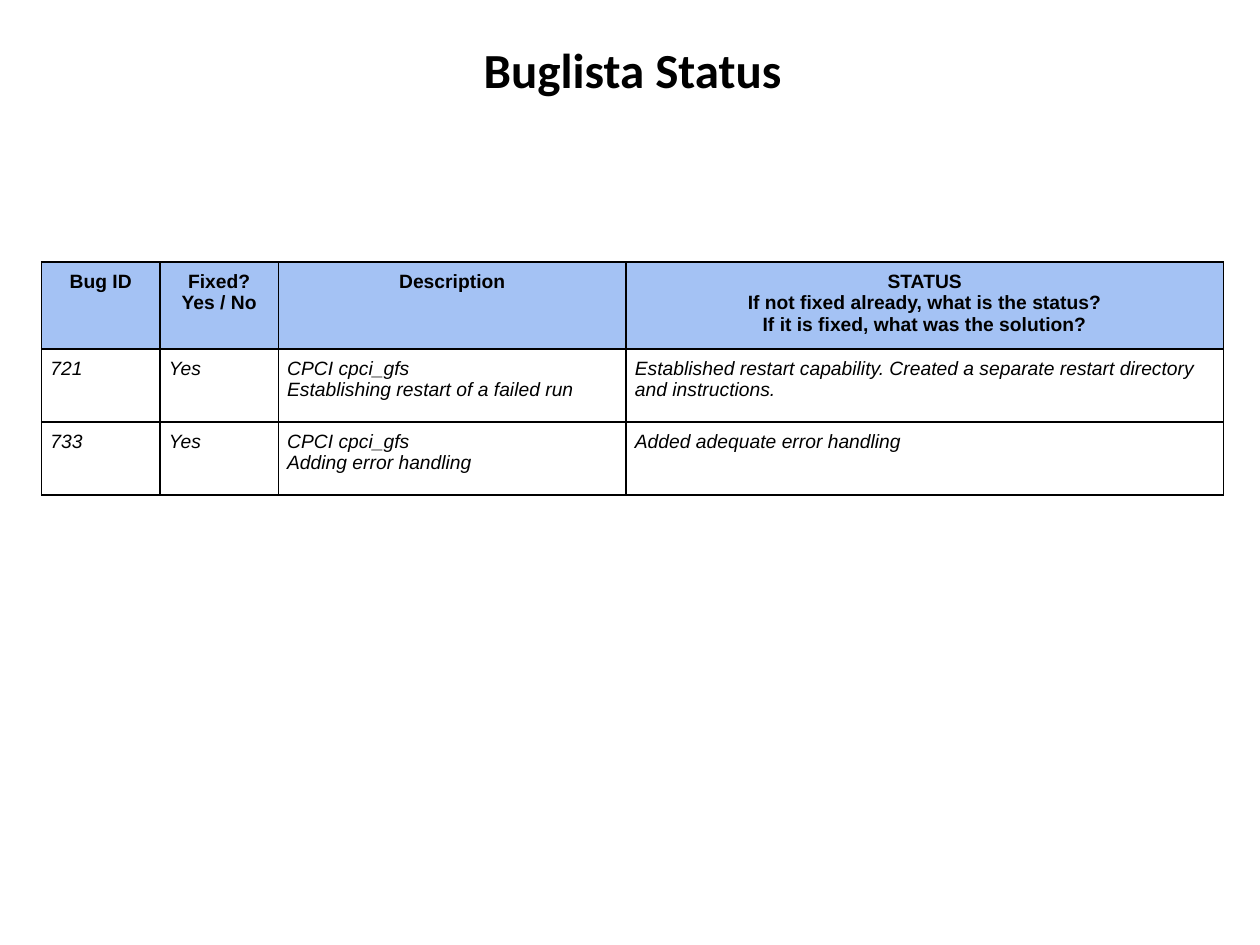
from lxml.etree import SubElement
from pptx import Presentation
from pptx.dml.color import RGBColor
from pptx.enum.text import MSO_ANCHOR, PP_ALIGN
from pptx.oxml.ns import qn
from pptx.util import Inches, Pt

BLACK = RGBColor(0x00, 0x00, 0x00)
HEADER_BLUE = RGBColor(0xA4, 0xC2, 0xF4)

COLUMN_WIDTHS = [0.94, 0.94, 2.76, 4.74]
ROW_HEIGHTS = [0.65, 0.58, 0.58]
BUG_ROWS = [
    ["Bug ID", "Fixed?\nYes / No", "Description",
     "STATUS\nIf not fixed already, what is the status?\n"
     "If it is fixed, what was the solution?"],
    ["721", "Yes", "CPCI cpci_gfs\nEstablishing restart of a failed run",
     "Established restart capability. Created a separate restart directory "
     "and instructions."],
    ["733", "Yes", "CPCI cpci_gfs\nAdding error handling",
     "Added adequate error handling"],
]


def write_text(frame, text, *, size, font="Arial", bold=False, italic=False,
               align=PP_ALIGN.LEFT):
    """Write each line of text as a paragraph of its own."""
    frame.word_wrap = True
    for index, line in enumerate(text.split("\n")):
        para = frame.add_paragraph() if index else frame.paragraphs[0]
        para.alignment = align
        span = para.add_run()
        span.text = line
        span.font.name = font
        span.font.size = Pt(size)
        span.font.bold = bold
        span.font.italic = italic
        span.font.color.rgb = BLACK


def add_title(slide, text):
    box = slide.shapes.add_textbox(Inches(0.08), Inches(0.17),
                                   Inches(9.88), Inches(0.76))
    box.text_frame.vertical_anchor = MSO_ANCHOR.MIDDLE
    write_text(box.text_frame, text, size=28, font="Calibri", bold=True,
               align=PP_ALIGN.CENTER)


def set_borders(cell):
    properties = cell._tc.get_or_add_tcPr()
    for index, side in enumerate(("lnL", "lnR", "lnT", "lnB")):
        line = properties.makeelement(qn(f"a:{side}"), {"w": str(Pt(1))})
        fill = SubElement(line, qn("a:solidFill"))
        SubElement(fill, qn("a:srgbClr"), val=str(BLACK))
        properties.insert(index, line)


def format_cell(cell, text, is_header):
    cell.margin_left = cell.margin_right = Inches(0.07)
    cell.margin_top = cell.margin_bottom = Inches(0.07)
    if is_header:
        cell.fill.solid()
        cell.fill.fore_color.rgb = HEADER_BLUE
    else:
        cell.fill.background()
    set_borders(cell)
    write_text(cell.text_frame, text, size=11, bold=is_header,
               italic=not is_header,
               align=PP_ALIGN.CENTER if is_header else PP_ALIGN.LEFT)


def add_bug_table(slide):
    table = slide.shapes.add_table(
        len(ROW_HEIGHTS), len(COLUMN_WIDTHS), Inches(0.33), Inches(2.08),
        Inches(sum(COLUMN_WIDTHS)), Inches(sum(ROW_HEIGHTS))).table
    for column, width in zip(table.columns, COLUMN_WIDTHS):
        column.width = Inches(width)
    for row_index, texts in enumerate(BUG_ROWS):
        table.rows[row_index].height = Inches(ROW_HEIGHTS[row_index])
        for column_index, text in enumerate(texts):
            format_cell(table.cell(row_index, column_index), text,
                        is_header=row_index == 0)


def main():
    deck = Presentation()
    deck.slide_width = Inches(10)
    deck.slide_height = Inches(7.5)
    slide = deck.slides.add_slide(deck.slide_layouts[6])
    add_title(slide, "Buglista Status")
    add_bug_table(slide)
    deck.save("out.pptx")


if __name__ == "__main__":
    main()
